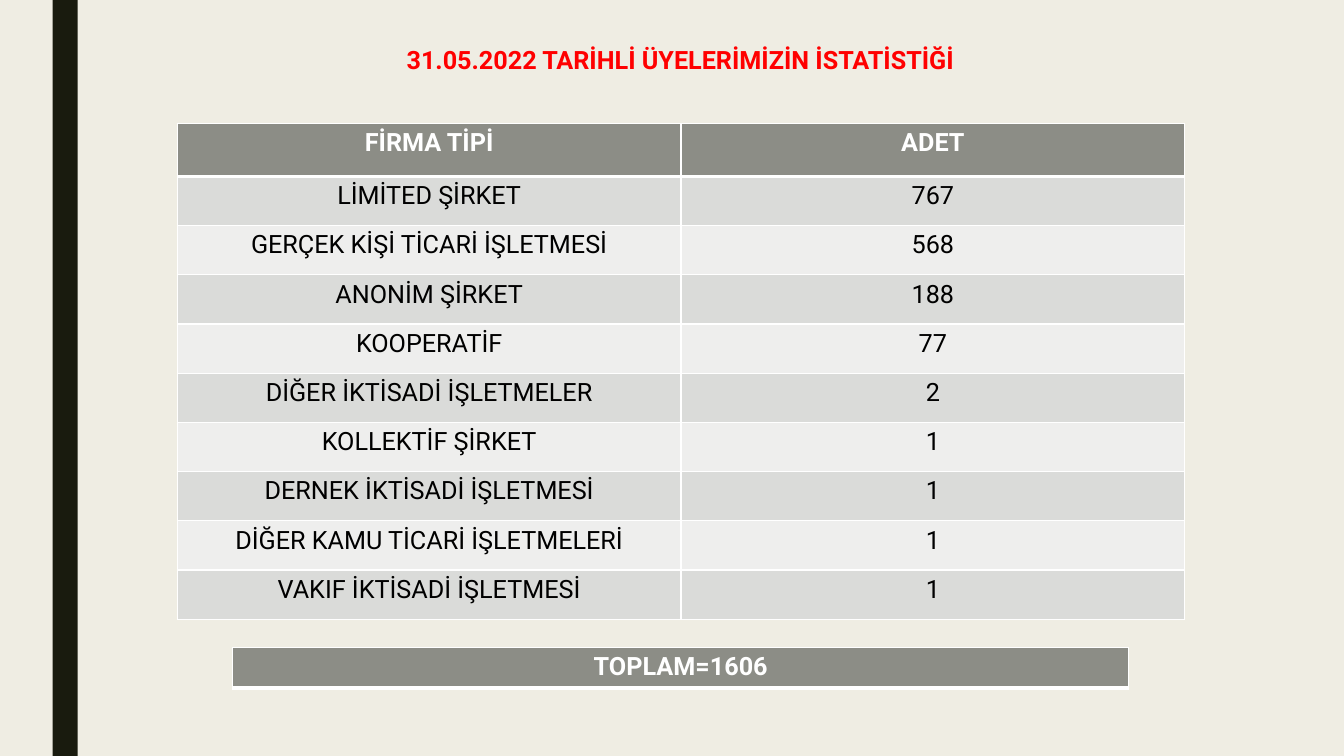
"""Builds the member statistics slide with its company table and total."""
from dataclasses import dataclass

import lxml.etree
import pptx
import pptx.dml.color
import pptx.enum.shapes
import pptx.enum.text
import pptx.oxml.ns
import pptx.util


@dataclass(frozen=True)
class Theme:
    font: str = "Roboto"
    size: int = 18
    background: str = "EFEDE3"
    stripe: str = "191B0E"
    title: str = "FF0000"
    header: str = "8C8D86"
    header_text: str = "FFFFFF"
    body_text: str = "000000"
    bands: tuple = ("DADBD9", "EEEEED")
    border: str = "FFFFFF"
    thin: int = 1
    thick: int = 3


class SlideBuilder:
    def __init__(self, slide, theme):
        self.slide = slide
        self.theme = theme
        self.paint(slide.background.fill, theme.background)

    def paint(self, fill, color):
        fill.solid()
        fill.fore_color.rgb = pptx.dml.color.RGBColor.from_string(color)

    def set_text(self, frame, text, color, bold):
        frame.text = text
        paragraph = frame.paragraphs[0]
        paragraph.alignment = pptx.enum.text.PP_ALIGN.CENTER
        paragraph.font.name = self.theme.font
        paragraph.font.size = pptx.util.Pt(self.theme.size)
        paragraph.font.bold = bold
        paragraph.font.color.rgb = pptx.dml.color.RGBColor.from_string(color)

    def title(self, text, left, top, width, height):
        heading = self.slide.shapes.title
        heading.left, heading.top = pptx.util.Pt(left), pptx.util.Pt(top)
        heading.width, heading.height = pptx.util.Pt(width), pptx.util.Pt(height)
        frame = heading.text_frame
        frame.word_wrap = True
        frame.auto_size = pptx.enum.text.MSO_AUTO_SIZE.SHAPE_TO_FIT_TEXT
        frame.vertical_anchor = pptx.enum.text.MSO_ANCHOR.MIDDLE
        self.set_text(frame, text, self.theme.title, True)

    def stripe(self, left, top, width, height):
        band = self.slide.shapes.add_shape(
            pptx.enum.shapes.MSO_SHAPE.RECTANGLE,
            *map(pptx.util.Pt, (left, top, width, height)))
        band.shadow.inherit = False
        self.paint(band.fill, self.theme.stripe)
        band.line.fill.background()

    def borders(self, cell, top, bottom):
        properties = cell._tc.get_or_add_tcPr()
        thin = self.theme.thin
        for side, weight in (("L", thin), ("R", thin), ("T", top), ("B", bottom)):
            edge = lxml.etree.SubElement(
                properties, pptx.oxml.ns.qn(f"a:ln{side}"), w=str(pptx.util.Pt(weight)))
            fill = lxml.etree.SubElement(edge, pptx.oxml.ns.qn("a:solidFill"))
            lxml.etree.SubElement(
                fill, pptx.oxml.ns.qn("a:srgbClr"), val=self.theme.border)

    def table(self, rows, left, top, width, header_height, row_height=0):
        theme = self.theme
        height = header_height + row_height * (len(rows) - 1)
        table = self.slide.shapes.add_table(
            len(rows), len(rows[0]),
            *map(pptx.util.Pt, (left, top, width, height))).table
        for index, values in enumerate(rows):
            is_header = index == 0
            table.rows[index].height = pptx.util.Pt(
                header_height if is_header else row_height)
            fill = theme.header if is_header else theme.bands[(index - 1) % 2]
            color = theme.header_text if is_header else theme.body_text
            for column, value in enumerate(values):
                cell = table.cell(index, column)
                self.borders(cell, theme.thick if index == 1 else theme.thin,
                             theme.thick if is_header else theme.thin)
                self.paint(cell.fill, fill)
                self.set_text(cell.text_frame, str(value), color, is_header)


def main():
    members = [
        ("FİRMA TİPİ", "ADET"),
        ("LİMİTED ŞİRKET", 767),
        ("GERÇEK KİŞİ TİCARİ İŞLETMESİ", 568),
        ("ANONİM ŞİRKET", 188),
        ("KOOPERATİF", 77),
        ("DİĞER İKTİSADİ İŞLETMELER", 2),
        ("KOLLEKTİF ŞİRKET", 1),
        ("DERNEK İKTİSADİ İŞLETMESİ", 1),
        ("DİĞER KAMU TİCARİ İŞLETMELERİ", 1),
        ("VAKIF İKTİSADİ İŞLETMESİ", 1),
    ]
    deck = pptx.Presentation()
    deck.slide_width, deck.slide_height = pptx.util.Pt(960), pptx.util.Pt(540)
    title_only = deck.slide_layouts.get_by_name("Title Only")
    builder = SlideBuilder(deck.slides.add_slide(title_only), Theme())
    builder.stripe(37.5, 0, 18, 540)
    builder.title("31.05.2022 TARİHLİ ÜYELERİMİZİN İSTATİSTİĞİ", 108, 28, 756, 29)
    builder.table(members, 126.75, 88, 719.5, 38, 35.15)
    builder.table([("TOPLAM=1606",)], 166.25, 462.5, 640, 29)
    deck.save("out.pptx")


if __name__ == "__main__":
    main()
